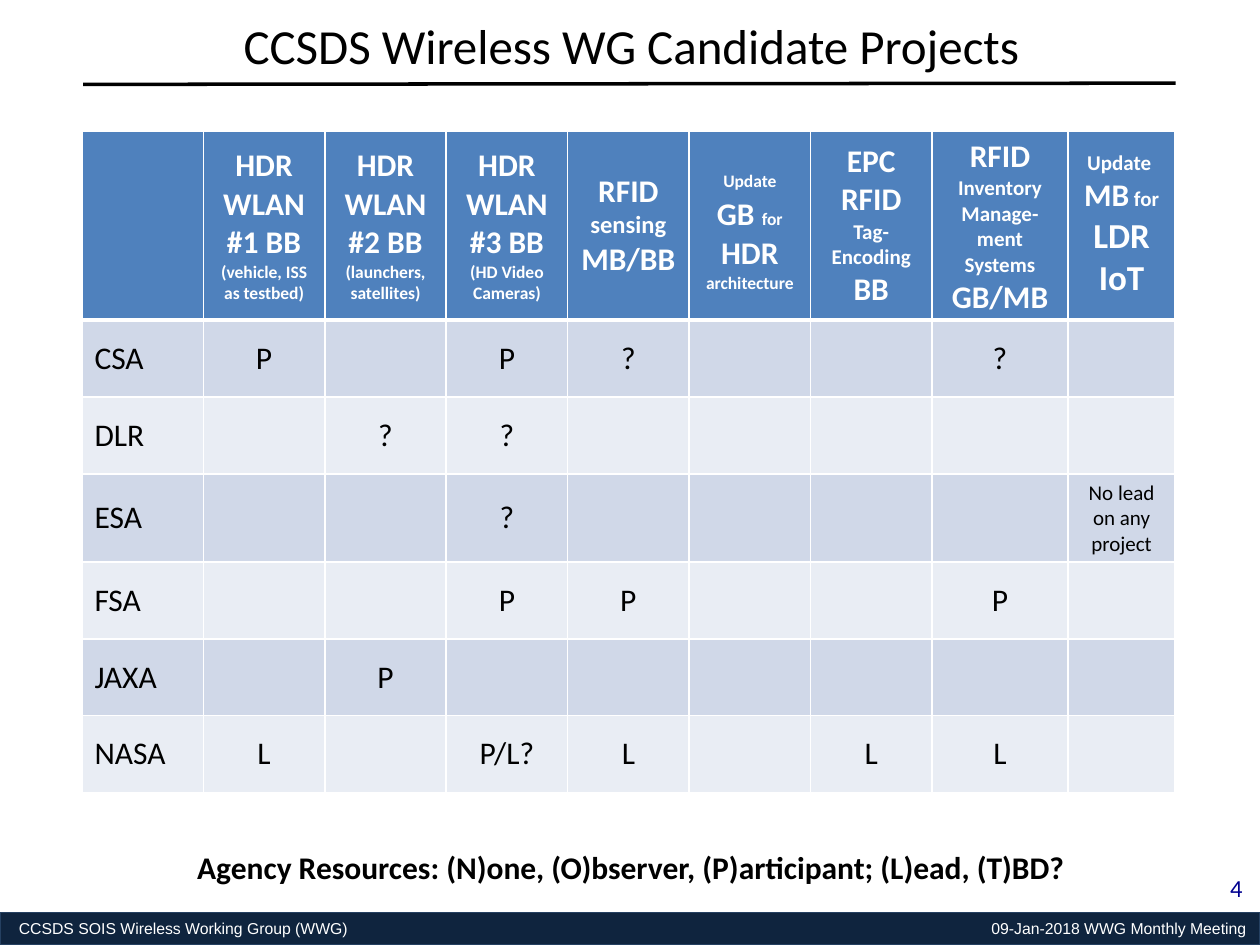
from dataclasses import dataclass

from lxml import etree
from pptx import Presentation
from pptx.dml.color import RGBColor
from pptx.enum.shapes import MSO_CONNECTOR, MSO_SHAPE
from pptx.enum.text import MSO_ANCHOR, MSO_AUTO_SIZE, PP_ALIGN
from pptx.oxml.ns import qn
from pptx.util import Inches, Pt

LEFT, CENTER, RIGHT = PP_ALIGN.LEFT, PP_ALIGN.CENTER, PP_ALIGN.RIGHT
MIDDLE = MSO_ANCHOR.MIDDLE
TITLE_ONLY = 5
COLORS = {
    "black": "000000", "white": "FFFFFF", "number": "000090",
    "footer": "0F243E", "footer_line": "254061",
    "header": "4F81BD", "odd": "D0D8E8", "even": "E9EDF4",
}


@dataclass(frozen=True)
class Box:
    """A place on a slide grid of 100 columns by 75 rows."""
    column: float
    row: float
    columns: float
    rows: float


@dataclass(frozen=True)
class Style:
    size: float = 18
    color: str = "black"
    bold: bool = False
    font: str = "Calibri"


# Header cells: paragraphs of (text, size) runs
HEADERS = [
    [],
    [[("HDR WLAN #1 BB", 18)], [("(vehicle, ISS as testbed)", 10)]],
    [[("HDR WLAN #2 BB", 18)], [("(launchers, satellites)", 10)]],
    [[("HDR WLAN", 18)], [("#3 BB", 18), (" ", 16), ("(HD Video Cameras)", 10)]],
    [[("RFID ", 18), ("sensing", 14)], [("MB/BB", 18)]],
    [[("Update", 10), (" GB ", 18), ("for", 10), (" HDR ", 18), ("architecture", 10)]],
    [[("EPC RFID ", 18), ("Tag-Encoding", 12)], [("BB", 18)]],
    [[("RFID", 18), (" Inventory Manage-ment Systems", 12)], [("GB/MB", 18)]],
    [[("Update ", 12)], [("MB", 18), (" for ", 12), ("LDR IoT", 20)]],
]
# Agency roles, keyed by project column
ROLES = {
    "CSA": {1: "P", 3: "P", 4: "?", 7: "?"},
    "DLR": {2: "?", 3: "?"},
    "ESA": {3: "?", 8: "No lead on any project"},
    "FSA": {3: "P", 4: "P", 7: "P"},
    "JAXA": {2: "P"},
    "NASA": {1: "L", 3: "P/L?", 4: "L", 6: "L", 7: "L"},
}
COLUMN_SPANS = [9.64] * 7 + [10.8, 8.5]
ROW_SPANS = [10.7] + [6.1] * len(ROLES)


def grid(units: float) -> int:
    return Inches(units / 10)


def place(box: Box) -> tuple:
    return grid(box.column), grid(box.row), grid(box.columns), grid(box.rows)


def rgb(name: str) -> RGBColor:
    return RGBColor.from_string(COLORS[name])


def add_run(paragraph, text: str, style: Style) -> None:
    run = paragraph.add_run()
    run.text = text
    run.font.size = Pt(style.size)
    run.font.name = style.font
    run.font.bold = style.bold
    run.font.color.rgb = rgb(style.color)


def add_label(slide, box: Box, text: str, style: Style, align, wrap: bool = True) -> None:
    frame = slide.shapes.add_textbox(*place(box)).text_frame
    frame.word_wrap = wrap
    frame.paragraphs[0].alignment = align
    add_run(frame.paragraphs[0], text, style)


def add_title(slide, box: Box, text: str) -> None:
    title = slide.shapes.title
    title.left, title.top, title.width, title.height = place(box)
    title.text_frame.auto_size = MSO_AUTO_SIZE.NONE
    paragraph = title.text_frame.paragraphs[0]
    paragraph.alignment = CENTER
    paragraph.line_spacing = 0.9
    add_run(paragraph, text, Style(28))


def add_rule(slide, start: tuple, end: tuple) -> None:
    points = [grid(value) for value in (*start, *end)]
    line = slide.shapes.add_connector(MSO_CONNECTOR.STRAIGHT, *points)
    line.line.color.rgb = rgb("black")
    line.line.width = Pt(2)
    etree.SubElement(line._element.spPr, qn("a:effectLst"))


def add_footer(slide, box: Box, left_text: str, right_text: str) -> None:
    bar = slide.shapes.add_shape(MSO_SHAPE.RECTANGLE, *place(box))
    bar.shadow.inherit = False
    bar.fill.solid()
    bar.fill.fore_color.rgb = rgb("footer")
    bar.line.color.rgb = rgb("footer_line")
    bar.line.width = Pt(0.75)
    frame = bar.text_frame
    frame.margin_left, frame.margin_right = Inches(0.15), Inches(0.1)
    frame.vertical_anchor = MIDDLE
    paragraph = frame.paragraphs[0]
    paragraph.alignment = LEFT
    # A right-aligned tab stop separates the two texts
    tabs = etree.SubElement(paragraph._p.get_or_add_pPr(), qn("a:tabLst"))
    etree.SubElement(tabs, qn("a:tab"), pos=str(Inches(9.74)), algn="r")
    add_run(paragraph, f"{left_text}\t{right_text}", Style(9, "white", font="Arial"))


def format_cell(cell, fill: str, bottom: float = 1, top: float = 1) -> None:
    cell.vertical_anchor = MIDDLE
    properties = cell._tc.get_or_add_tcPr()
    for side, points in (("L", 1), ("R", 1), ("T", top), ("B", bottom)):
        border = etree.SubElement(properties, qn(f"a:ln{side}"), w=str(Pt(points)))
        solid = etree.SubElement(border, qn("a:solidFill"))
        etree.SubElement(solid, qn("a:srgbClr"), val=COLORS["white"])
    cell.fill.solid()
    cell.fill.fore_color.rgb = rgb(fill)


def fill_header(cell, paragraphs: list) -> None:
    format_cell(cell, "header", bottom=3)
    frame = cell.text_frame
    for index, runs in enumerate(paragraphs):
        paragraph = frame.add_paragraph() if index else frame.paragraphs[0]
        paragraph.alignment = CENTER
        for text, size in runs:
            add_run(paragraph, text, Style(size, "white", True))


def add_projects(slide, box: Box) -> None:
    shape = slide.shapes.add_table(len(ROW_SPANS), len(COLUMN_SPANS), *place(box))
    table = shape.table
    for column, span in zip(table.columns, COLUMN_SPANS):
        column.width = grid(span)
    for row, span in zip(table.rows, ROW_SPANS):
        row.height = grid(span)
    for index, paragraphs in enumerate(HEADERS):
        fill_header(table.cell(0, index), paragraphs)
    for row, (agency, roles) in enumerate(ROLES.items(), start=1):
        texts = {0: agency, **roles}
        for column in range(len(COLUMN_SPANS)):
            cell = table.cell(row, column)
            format_cell(cell, "odd" if row % 2 else "even", top=3 if row == 1 else 1)
            if column in texts:
                text = texts[column]
                paragraph = cell.text_frame.paragraphs[0]
                paragraph.alignment = CENTER if column else LEFT
                add_run(paragraph, text, Style(12 if len(text) > 4 else 18))


def main() -> None:
    presentation = Presentation()
    presentation.slide_width, presentation.slide_height = grid(100), grid(75)
    slide = presentation.slides.add_slide(presentation.slide_layouts[TITLE_ONLY])

    # Footer and slide number
    add_footer(slide, Box(0, 72.4, 100, 2.6),
               "CCSDS SOIS Wireless Working Group (WWG)",
               "09-Jan-2018 WWG Monthly Meeting")
    add_label(slide, Box(93, 68.8, 6.6, 3.5), "4", Style(14, "number"), RIGHT)

    # Title with its rule
    add_title(slide, Box(2.9, 1.1, 94.4, 5.6), "CCSDS Wireless WG Candidate Projects")
    add_rule(slide, (6.6, 6.7), (93.3, 6.6))

    # Projects by agency, and the key to the letters
    add_projects(slide, Box(6.5, 10.4, sum(COLUMN_SPANS), sum(ROW_SPANS)))
    add_label(slide, Box(14.3, 66.8, 71.6, 4),
              "Agency Resources: (N)one, (O)bserver, (P)articipant; (L)ead, (T)BD?",
              Style(bold=True), CENTER, wrap=False)

    presentation.save("out.pptx")


if __name__ == "__main__":
    main()
